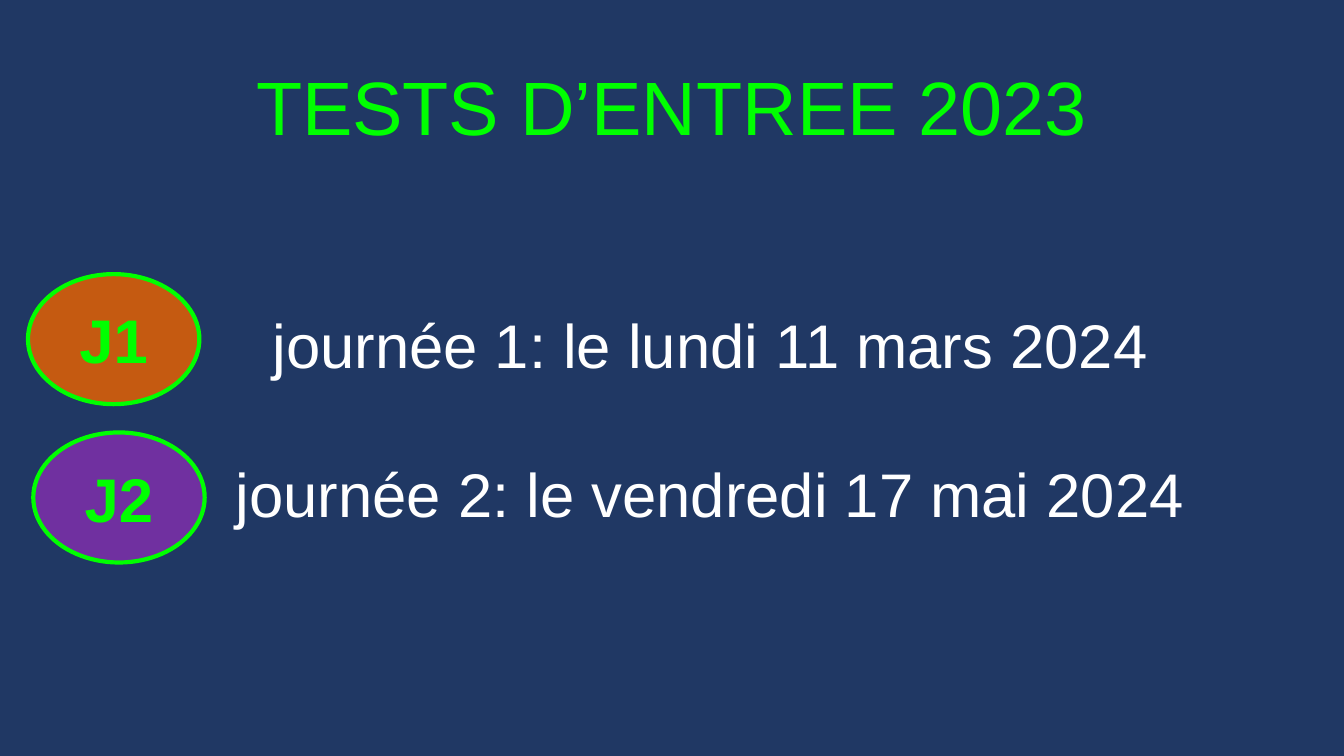
from pptx import Presentation
from pptx.dml.color import RGBColor
from pptx.enum import shapes, text
from pptx.util import Pt

NAVY = RGBColor(0x20, 0x38, 0x64)
GREEN = RGBColor(0x00, 0xFF, 0x00)
WHITE = RGBColor(0xFF, 0xFF, 0xFF)
ORANGE = RGBColor(0xC5, 0x5A, 0x11)
PURPLE = RGBColor(0x70, 0x30, 0xA0)
FONT = "Arial"


def write_text(shape, lines, size, color, bold=False, gap=0, anchor=text.MSO_ANCHOR.TOP):
    """Write centred lines into a shape, with a gap in points between them."""
    frame = shape.text_frame
    frame.word_wrap = True
    frame.auto_size = text.MSO_AUTO_SIZE.NONE
    frame.vertical_anchor = anchor
    for index, line in enumerate(lines):
        paragraph = frame.add_paragraph() if index else frame.paragraphs[0]
        paragraph.alignment = text.PP_ALIGN.CENTER
        paragraph.line_spacing = 1.0
        paragraph.space_before = Pt(gap if index else 0)
        run = paragraph.add_run()
        run.text = line
        run.font.name = FONT
        run.font.size = Pt(size)
        run.font.bold = bold
        run.font.color.rgb = color


def place(shape, box):
    """Move a shape to a box given in points."""
    shape.left, shape.top, shape.width, shape.height = map(Pt, box)


def add_title(slide, box, title):
    """Place the slide title in its box."""
    place(slide.shapes.title, box)
    write_text(slide.shapes.title, [title], size=54, color=GREEN)


def add_dates(slide, box, dates):
    """Place the test dates in the body placeholder, without bullets."""
    body = slide.placeholders[1]
    place(body, box)
    write_text(body, dates, size=44, color=WHITE, gap=54)
    for paragraph in body.text_frame.paragraphs:
        properties = paragraph._p.get_or_add_pPr()
        properties.set("marL", "0")
        properties.set("indent", "0")
        properties.insert_element_before(
            properties.makeelement(
                "{http://schemas.openxmlformats.org/drawingml/2006/main}buNone", {}),
            "a:tabLst", "a:defRPr", "a:extLst")


def add_day_badge(slide, box, label, fill):
    """Draw an outlined oval badge naming a test day."""
    badge = slide.shapes.add_shape(shapes.MSO_SHAPE.OVAL, *map(Pt, box))
    badge.shadow.inherit = False
    badge.fill.solid()
    badge.fill.fore_color.rgb = fill
    badge.line.color.rgb = GREEN
    badge.line.width = Pt(3)
    write_text(badge, [label], size=44, color=GREEN, bold=True,
               anchor=text.MSO_ANCHOR.MIDDLE)


def build_tests_slide(presentation):
    """Build the slide announcing the entrance test days."""
    slide = presentation.slides.add_slide(presentation.slide_layouts[1])
    slide.background.fill.solid()
    slide.background.fill.fore_color.rgb = NAVY
    add_dates(slide, (101.5, 215.3, 812, 167),
              ["journée 1: le lundi 11 mars 2024", "journée 2: le vendredi 17 mai 2024"])
    add_title(slide, (85, 38.9, 790, 72.7), "TESTS D’ENTREE 2023")
    add_day_badge(slide, (20, 195.8, 122.4, 92.9), "J1", ORANGE)
    add_day_badge(slide, (23.8, 308.9, 122.4, 92.9), "J2", PURPLE)


def main():
    """Create and save the presentation."""
    presentation = Presentation()
    presentation.slide_width, presentation.slide_height = Pt(960), Pt(540)
    build_tests_slide(presentation)
    presentation.save("out.pptx")


if __name__ == "__main__":
    main()
